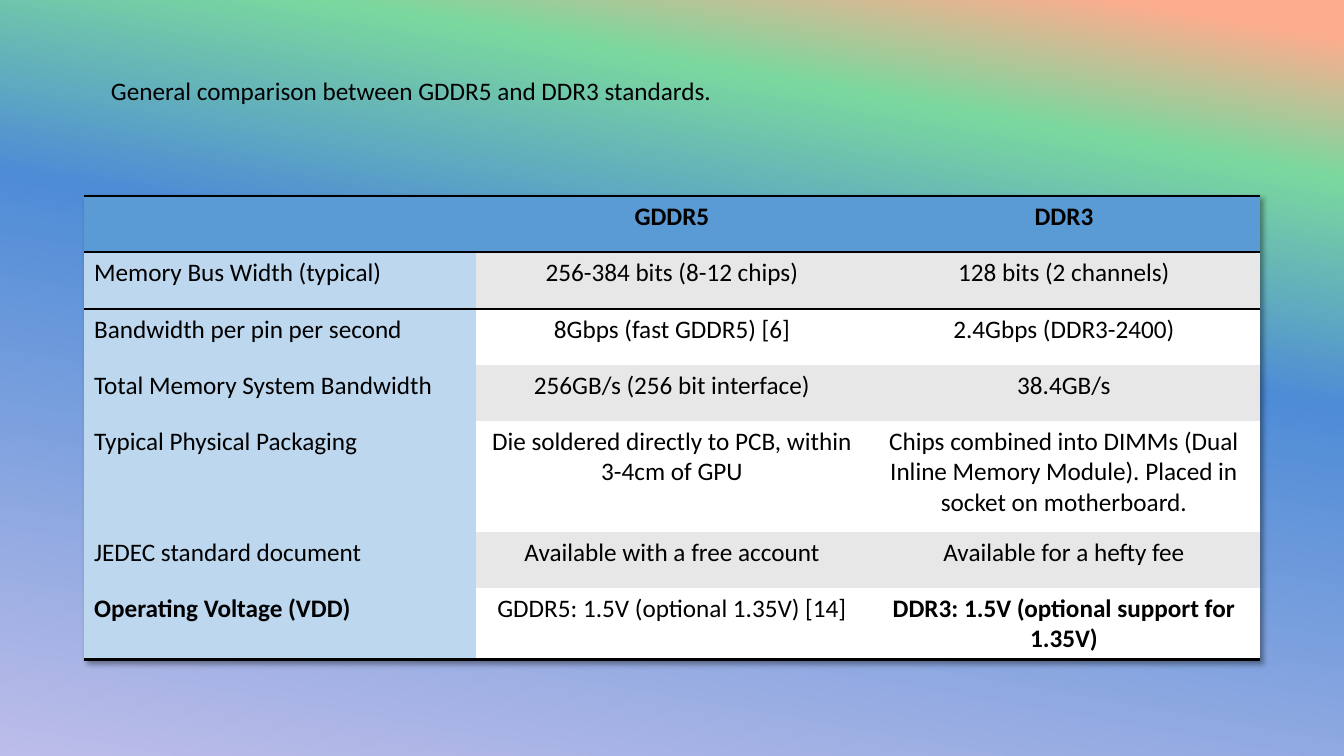
from pptx import Presentation
from pptx.dml.color import RGBColor as Color
from pptx.enum.text import MSO_AUTO_SIZE as AutoSize, PP_ALIGN as Align
from pptx.oxml import parse_xml
from pptx.oxml.ns import nsdecls, qn
from pptx.util import Pt

CAPTION = "General comparison between GDDR5 and DDR3 standards."
HEADER = ("", "GDDR5", "DDR3")
COMPARISON = [
    ("Memory Bus Width (typical)", "256-384 bits (8-12 chips)", "128 bits (2 channels)"),
    ("Bandwidth per pin per second", "8Gbps (fast GDDR5) [6]", "2.4Gbps (DDR3-2400)"),
    ("Total Memory System Bandwidth", "256GB/s (256 bit interface)", "38.4GB/s"),
    ("Typical Physical Packaging", "Die soldered directly to PCB, within 3-4cm of GPU",
     "Chips combined into DIMMs (Dual Inline Memory Module). Placed in socket on motherboard."),
    ("JEDEC standard document", "Available with a free account", "Available for a hefty fee"),
    ("Operating Voltage (VDD)", "GDDR5: 1.5V (optional 1.35V) [14]",
     "DDR3: 1.5V (optional support for 1.35V)"),
]
ROWS = [HEADER, *COMPARISON]
LAST = len(ROWS) - 1
BOLD_CELLS = {(0, 1), (0, 2), (LAST, 0), (LAST, 2)}

THEME = {
    "font": "Calibri", "size": 18, "text": "000000", "rule": "000000", "rule_width": 2,
    "header": "5B9BD5", "label": "BDD7EE", "bands": ("FFFFFF", "E7E7E7"),
    "gradient": [(4, "FCAD8E", 100), (18, "7AD89E", 100), (41, "4E8CD6", 69), (100, "BDBDE9", 100)],
    "gradient_angle": 100,
    "table_style": "{2D5ABB26-0587-4C30-8999-92F81FD0307C}",
}

EMU_PER_INCH, PX_PER_INCH = 914400, 100.8
SLIDE_SIZE = (1344, 756)
CAPTION_BOX = (101, 70, 628, 40)
TABLE_ORIGIN = (84, 196)
COLUMN_WIDTH = 392
ROW_HEIGHTS = (56, 57, 56, 56, 111, 56, 71)


def px(length):
    return round(length * EMU_PER_INCH / PX_PER_INCH)


def write(para, text, bold=False):
    span = para.add_run()
    span.text = text
    style = {"name": THEME["font"], "size": Pt(THEME["size"]), "bold": bold}
    for name, value in style.items():
        setattr(span.font, name, value)
    span.font.color.rgb = Color.from_string(THEME["text"])


def paint_background(page):
    stops = "".join(
        f'<a:gs pos="{place * 1000}"><a:srgbClr val="{color}">'
        f'<a:alpha val="{alpha * 1000}"/></a:srgbClr></a:gs>'
        for place, color, alpha in THEME["gradient"])
    page.background.fill.solid()
    properties = page.element.cSld.find(qn("p:bg")).find(qn("p:bgPr"))
    gradient = parse_xml(
        f'<a:gradFill {nsdecls("a")} rotWithShape="1"><a:gsLst>{stops}</a:gsLst>'
        f'<a:lin ang="{THEME["gradient_angle"] * 60000}" scaled="0"/></a:gradFill>')
    properties.replace(properties.find(qn("a:solidFill")), gradient)


def add_caption(page):
    box = page.shapes.add_textbox(*map(px, CAPTION_BOX))
    frame = box.text_frame
    for name, value in {"word_wrap": False, "auto_size": AutoSize.SHAPE_TO_FIT_TEXT}.items():
        setattr(frame, name, value)
    write(frame.paragraphs[0], CAPTION)


def rule_cell(cell, sides):
    properties = cell._tc.get_or_add_tcPr()
    for index, side in enumerate(sides):
        properties.insert(index, parse_xml(
            f'<a:{side} {nsdecls("a")} w="{Pt(THEME["rule_width"])}"><a:solidFill>'
            f'<a:srgbClr val="{THEME["rule"]}"/></a:solidFill></a:{side}>'))


def cell_color(row, column):
    if row == 0:
        return THEME["header"]
    return THEME["label"] if column == 0 else THEME["bands"][row % 2]


def fill_cell(cell, row, column, text):
    cell.fill.solid()
    cell.fill.fore_color.rgb = Color.from_string(cell_color(row, column))
    rule_cell(cell, {0: ("lnT", "lnB"), 1: ("lnT",), LAST: ("lnB",)}.get(row, ()))
    para = cell.text_frame.paragraphs[0]
    para.alignment = Align.CENTER if column else Align.LEFT
    if text:
        write(para, text, (row, column) in BOLD_CELLS)


def add_comparison(page):
    size = (COLUMN_WIDTH * len(HEADER), sum(ROW_HEIGHTS))
    frame = page.shapes.add_table(len(ROWS), len(HEADER), *map(px, TABLE_ORIGIN + size))
    table = frame.table
    table.horz_banding = False
    properties = table._tbl.tblPr
    properties.find(qn("a:tableStyleId")).text = THEME["table_style"]
    properties.insert(0, parse_xml(
        f'<a:effectLst {nsdecls("a")}><a:outerShdw blurRad="50800" dist="38100" dir="2700000" '
        'algn="tl" rotWithShape="0"><a:srgbClr val="000000"><a:alpha val="40000"/>'
        '</a:srgbClr></a:outerShdw></a:effectLst>'))
    for column in table.columns:
        column.width = px(COLUMN_WIDTH)
    for row, texts in enumerate(ROWS):
        table.rows[row].height = px(ROW_HEIGHTS[row])
        for column, text in enumerate(texts):
            fill_cell(table.cell(row, column), row, column, text)


def main():
    deck = Presentation()
    deck.slide_width, deck.slide_height = map(px, SLIDE_SIZE)
    page = deck.slides.add_slide(deck.slide_layouts[6])
    paint_background(page)
    add_comparison(page)
    add_caption(page)
    deck.save("out.pptx")


if __name__ == "__main__":
    main()
